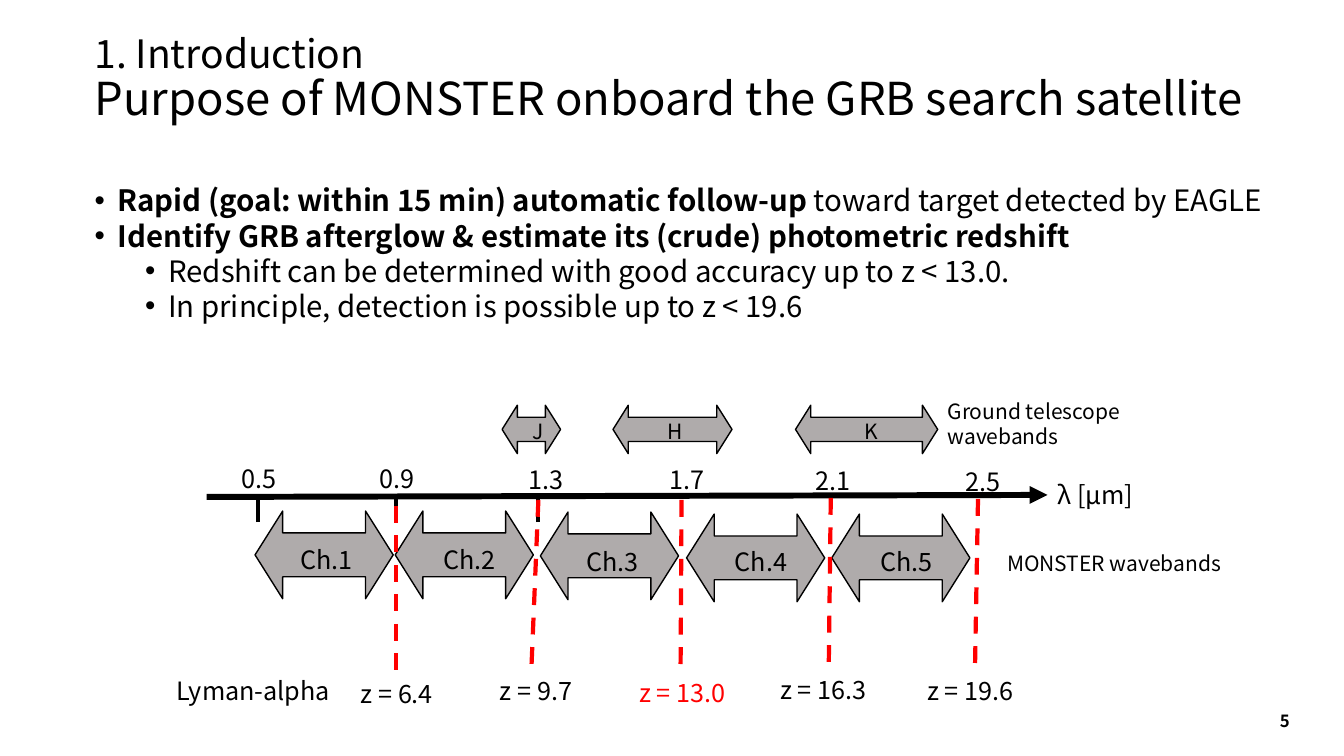
from collections import namedtuple

from lxml.etree import SubElement
from pptx import Presentation
from pptx.dml.color import RGBColor
from pptx.enum.dml import MSO_LINE_DASH_STYLE as Dash
from pptx.enum.shapes import MSO_CONNECTOR as Connector, MSO_SHAPE as Shape
from pptx.enum.text import MSO_ANCHOR as Anchor, MSO_AUTO_SIZE as AutoSize, PP_ALIGN as Align
from pptx.oxml.ns import qn
from pptx.util import Inches, Pt

FONT = "Noto Sans CJK JP"
BLACK, RED, GRAY = "000000", "FF0000", "AFABAB"
Box = namedtuple("Box", "left top width height")


def color(code):
    """Turn a hex string into a colour."""
    return RGBColor.from_string(code)


def inside(box, left, top, width, height):
    """Place a box relative to the corner of another."""
    return Box(box.left + left, box.top + top, width, height)


def add_span(para, text, size, code=BLACK, bold=False):
    """Add one run of text."""
    span = para.add_run()
    span.text = text
    span.font.name = FONT
    span.font.size = Pt(size)
    span.font.bold = bold
    span.font.color.rgb = color(code)


def add_frame(page, box, wrap=True, anchor=Anchor.TOP, grow=False):
    """Add a text box and return its text frame."""
    frame = page.shapes.add_textbox(*map(Inches, box)).text_frame
    frame.word_wrap = wrap
    frame.vertical_anchor = anchor
    frame.auto_size = AutoSize.SHAPE_TO_FIT_TEXT if grow else AutoSize.NONE
    return frame


def add_label(page, box, lines, size=18, code=BLACK):
    """Add a label that does not wrap, one paragraph a line."""
    frame = add_frame(page, box, wrap=False, grow=True)
    for index, line in enumerate(lines.split("\n")):
        para = frame.add_paragraph() if index else frame.paragraphs[0]
        add_span(para, line, size, code)


def add_line(page, start, end, width, code=BLACK, dashed=False, arrow=False):
    """Draw a straight line between two points."""
    line = page.shapes.add_connector(Connector.STRAIGHT, *map(Inches, (*start, *end)))
    line.line.color.rgb = color(code)
    line.line.width = Pt(width)
    if dashed:
        line.line.dash_style = Dash.DASH
    if arrow:
        SubElement(line.line._get_or_add_ln(), qn("a:tailEnd"), type="triangle")
    SubElement(line._element.spPr, qn("a:effectLst"))


def add_band(page, box):
    """Draw the double arrow of a waveband."""
    band = page.shapes.add_shape(Shape.LEFT_RIGHT_ARROW, *map(Inches, box))
    band.adjustments[0], band.adjustments[1] = 0.5, 0.315
    band.shadow.inherit = False
    band.fill.solid()
    band.fill.fore_color.rgb = color(GRAY)
    band.line.color.rgb = color(BLACK)
    band.line.width = Pt(1)


def add_title(page, box):
    """Write the section name and the slide title."""
    para = add_frame(page, box, anchor=Anchor.MIDDLE).paragraphs[0]
    para.line_spacing = 0.9
    add_span(para, "1. Introduction ", 27.9)
    para.add_line_break()
    add_span(para, "Purpose of MONSTER onboard the GRB search satellite", 32.4)


def add_goals(page, box):
    """Write the bulleted goals on two levels."""
    goals = [
        (0, "Rapid (goal: within 15 min) automatic follow-up", " toward target detected by EAGLE"),
        (0, "Identify GRB afterglow & estimate its (crude) photometric redshift", ""),
        (1, "", "Redshift can be determined with good accuracy up to z < 13.0."),
        (1, "", "In principle, detection is possible up to z < 19.6"),
    ]
    frame = add_frame(page, box, grow=True)
    for index, (level, strong, plain) in enumerate(goals):
        para = frame.add_paragraph() if index else frame.paragraphs[0]
        para.level = level
        properties = para._p.get_or_add_pPr()
        properties.set("marL", str(Inches(0.23 + 0.5 * level)))
        properties.set("indent", str(Inches(-0.23)))
        SubElement(properties, qn("a:buFont"), typeface="Arial")
        SubElement(properties, qn("a:buChar"), char="•")
        for text, bold in ((strong, True), (plain, False)):
            if text:
                add_span(para, text, 21, bold=bold)


def add_ground_bands(page, box):
    """Draw the wavebands of ground telescopes."""
    bands = [("J", 0, 0.58, 0.2, 0.29), ("H", 1.1, 1.18, 1.54, 0.36), ("K", 2.91, 1.41, 3.5, 0.35)]
    for name, left, width, label_left, label_width in bands:
        add_band(page, inside(box, left, 0.12, width, 0.48))
        add_label(page, inside(box, label_left, 0.2, label_width, 0.35), name, 15)
    add_label(page, inside(box, 4.32, 0, 1.91, 0.61), "Ground telescope\nwavebands", 15)


def add_channels(page, box):
    """Draw the five wavebands of the instrument."""
    channels = [(0, 0, 0.35), (1.39, 0, 1.77), (2.83, 0.01, 3.19), (4.28, 0.03, 4.66), (5.72, 0.03, 6.1)]
    for number, (left, top, label_left) in enumerate(channels, 1):
        add_band(page, inside(box, left, top, 1.37, 0.87))
        label_top = 0.28 if number < 3 else 0.3
        add_label(page, inside(box, label_left, label_top, 0.73, 0.4), f"Ch.{number}")
    add_label(page, inside(box, 7.36, 0.34, 2.39, 0.35), "MONSTER wavebands", 15)


def add_axis(page, box):
    """Draw the wavelength axis with its values and ticks."""
    left, top = box.left, box.top
    add_line(page, (left, top + 0.38), (left + 8.34, top + 0.36), 4.25, arrow=True)
    values = [("0.5", 0.25, 0), ("0.9", 1.62, 0), ("1.3", 3.09, 0.01),
              ("1.7", 4.49, 0.01), ("2.1", 5.94, 0.02), ("2.5", 7.43, 0.03)]
    for value, value_left, value_top in values:
        add_label(page, inside(box, value_left, value_top, 0.55, 0.4), value)
    for tick in (0.51, 1.88, 3.29):
        add_line(page, (left + tick, top + 0.63), (left + tick, top + 0.4), 3)
    add_label(page, inside(box, 8.34, 0.16, 0.97, 0.4), "λ [µm]")


def add_redshifts(page, box):
    """Draw the dashed Lyman-alpha limits and their redshifts."""
    left, top = box.left, box.top
    add_label(page, inside(box, 0, 1.71, 1.73, 0.4), "Lyman-alpha")
    limits = [
        ("6.4", (2.28, 0.08), (2.28, 1.71), (1.83, 1.74)),
        ("9.7", (3.69, 0.02), (3.62, 1.71), (3.21, 1.71)),
        ("13.0", (5.11, 0.02), (5.1, 1.68), (4.59, 1.73)),
        ("16.3", (6.59, 0), (6.57, 1.67), (5.99, 1.7)),
        ("19.6", (8.05, 0.01), (8.02, 1.71), (7.45, 1.71)),
    ]
    for value, start, end, corner in limits:
        add_line(page, (left + start[0], top + start[1]), (left + end[0], top + end[1]), 3, RED, dashed=True)
        width = 0.99 if len(value) == 3 else 1.13
        code = RED if value == "13.0" else BLACK
        add_label(page, inside(box, *corner, width, 0.4), f"z = {value}", code=code)


def add_page_number(page, box):
    """Write the page number."""
    para = add_frame(page, box, anchor=Anchor.MIDDLE).paragraphs[0]
    para.alignment = Align.RIGHT
    add_span(para, "5", 12, bold=True)


def main():
    """Build the slide and save the deck."""
    deck = Presentation()
    deck.slide_width, deck.slide_height = Inches(13.33), Inches(7.5)
    page = deck.slides.add_slide(deck.slide_layouts[6])
    add_title(page, Box(0.84, 0.25, 12.36, 1.09))
    add_goals(page, Box(0.84, 1.76, 11.96, 1.51))
    add_channels(page, Box(2.53, 5.07, 9.75, 0.9))
    add_axis(page, Box(2.05, 4.55, 9.31, 0.64))
    add_redshifts(page, Box(1.65, 4.94, 8.58, 2.14))
    add_ground_bands(page, Box(4.98, 3.9, 6.23, 0.61))
    add_page_number(page, Box(9.89, 6.95, 3, 0.4))
    deck.save("out.pptx")


if __name__ == "__main__":
    main()
